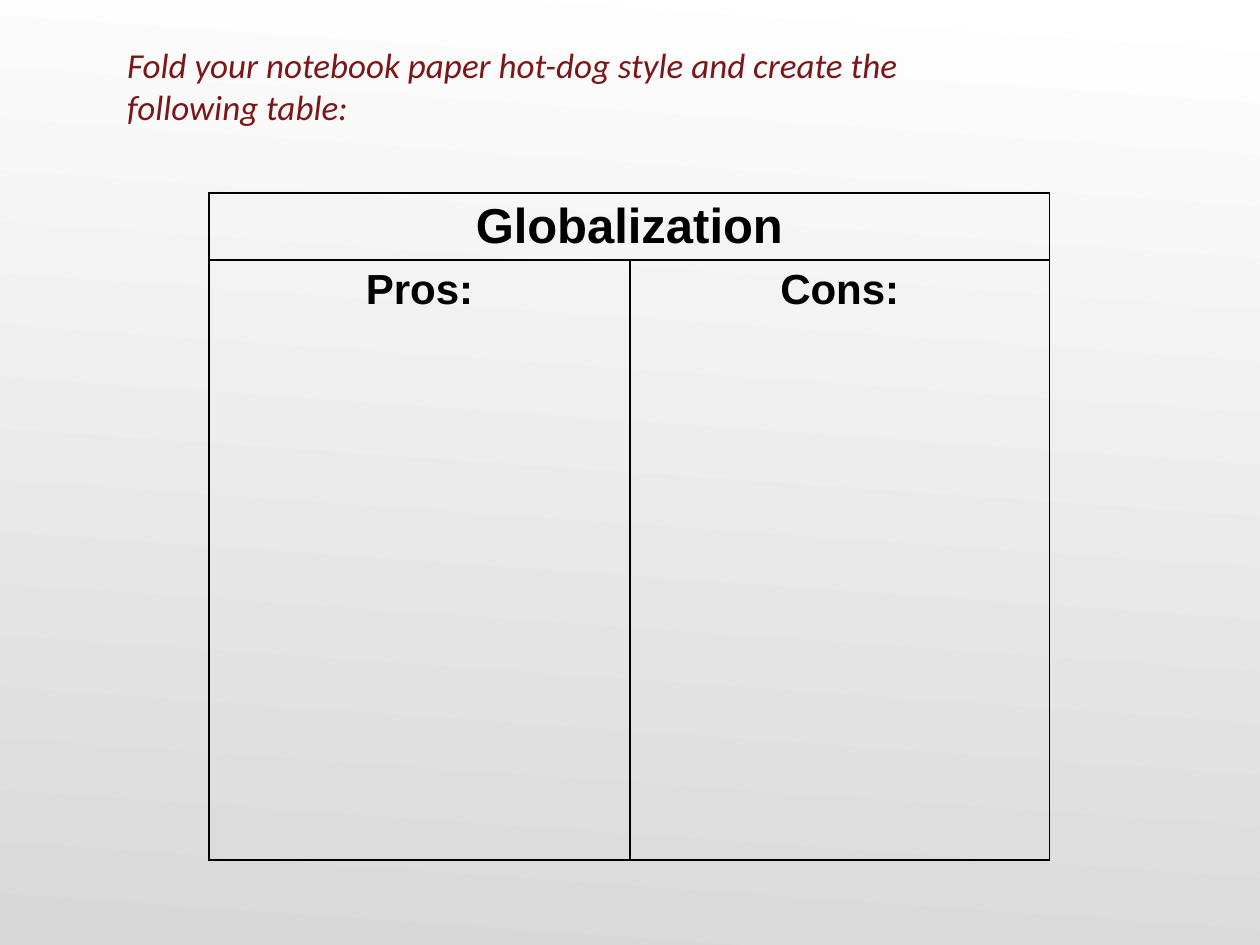
from lxml import etree
from pptx import Presentation
from pptx.dml.color import RGBColor
from pptx.enum.text import MSO_AUTO_SIZE, PP_ALIGN
from pptx.oxml.ns import qn
from pptx.util import Inches, Pt

CENTER, LEFT = PP_ALIGN.CENTER, PP_ALIGN.LEFT
GROW = MSO_AUTO_SIZE.SHAPE_TO_FIT_TEXT
BLACK = RGBColor(0x00, 0x00, 0x00)
MAROON = RGBColor(0x7D, 0x16, 0x19)
WHITE = RGBColor(0xFF, 0xFF, 0xFF)
GRAY = RGBColor(0xD8, 0xD8, 0xD8)


def add_text(frame, text, font, size, color, align, bold=False, italic=False):
    paragraph = frame.paragraphs[0]
    paragraph.alignment = align
    run = paragraph.add_run()
    run.text = text
    run.font.name = font
    run.font.size = Pt(size)
    run.font.color.rgb = color
    run.font.bold = bold
    run.font.italic = italic


def add_borders(cell, color, width):
    properties = cell._tc.get_or_add_tcPr()
    for side in ("lnL", "lnR", "lnT", "lnB"):
        line = etree.SubElement(properties, qn(f"a:{side}"), w=str(Pt(width)))
        fill = etree.SubElement(line, qn("a:solidFill"))
        etree.SubElement(fill, qn("a:srgbClr"), val=str(color))


prs = Presentation()
prs.slide_width, prs.slide_height = Inches(10), Inches(7.5)
slide = prs.slides.add_slide(prs.slide_layouts[6])

# Background: white to gray, 94 degrees clockwise
backdrop = slide.background.fill
backdrop.gradient()
backdrop.gradient_angle = 360 - 94
for stop, color in zip(backdrop.gradient_stops, (WHITE, GRAY)):
    stop.color.rgb = color

# Pros and cons table
pros_cons = slide.shapes.add_table(
    2, 2, Inches(1.66), Inches(1.53), Inches(6.67), Inches(5.29)).table
pros_cons.first_row = False
pros_cons.horz_banding = False
for column, width in zip(pros_cons.columns, (3.34, 3.33)):
    column.width = Inches(width)
for row, height in zip(pros_cons.rows, (0.53, 4.76)):
    row.height = Inches(height)
for cell in pros_cons.iter_cells():
    add_borders(cell, BLACK, 1)
    cell.fill.background()
pros_cons.cell(0, 0).merge(pros_cons.cell(0, 1))

for row, column, label, size in (
        (0, 0, "Globalization", 28), (1, 0, "Pros:", 24), (1, 1, "Cons:", 24)):
    add_text(pros_cons.cell(row, column).text_frame, label, "Arial", size,
             BLACK, CENTER, bold=True)

# Instruction
instruction = slide.shapes.add_textbox(
    Inches(0.91), Inches(0.3), Inches(7.42), Inches(0.77)).text_frame
instruction.word_wrap = True
instruction.auto_size = GROW
add_text(instruction,
         "Fold your notebook paper hot-dog style and create the following table:",
         "Calibri", 20, MAROON, LEFT, italic=True)

prs.save("out.pptx")
